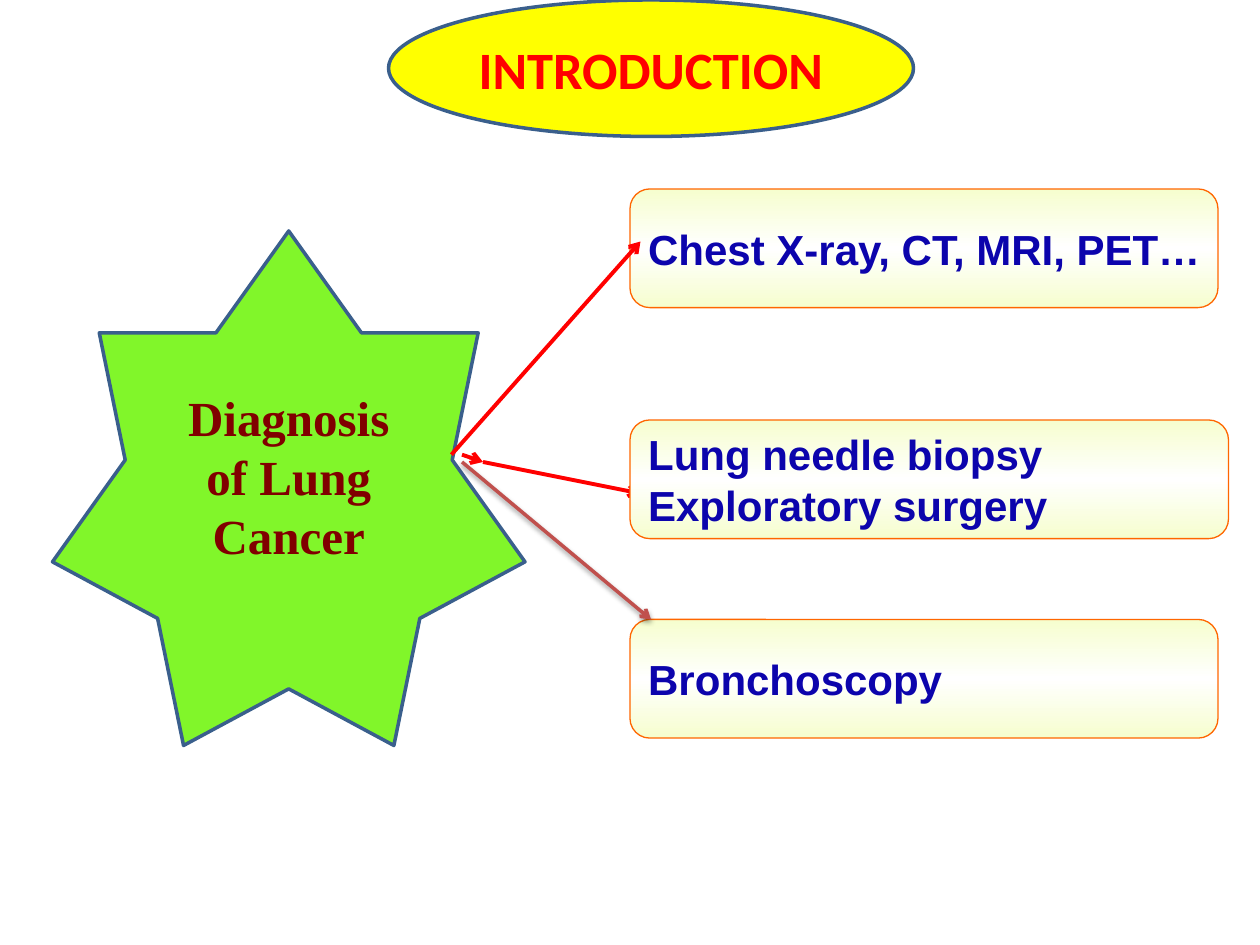
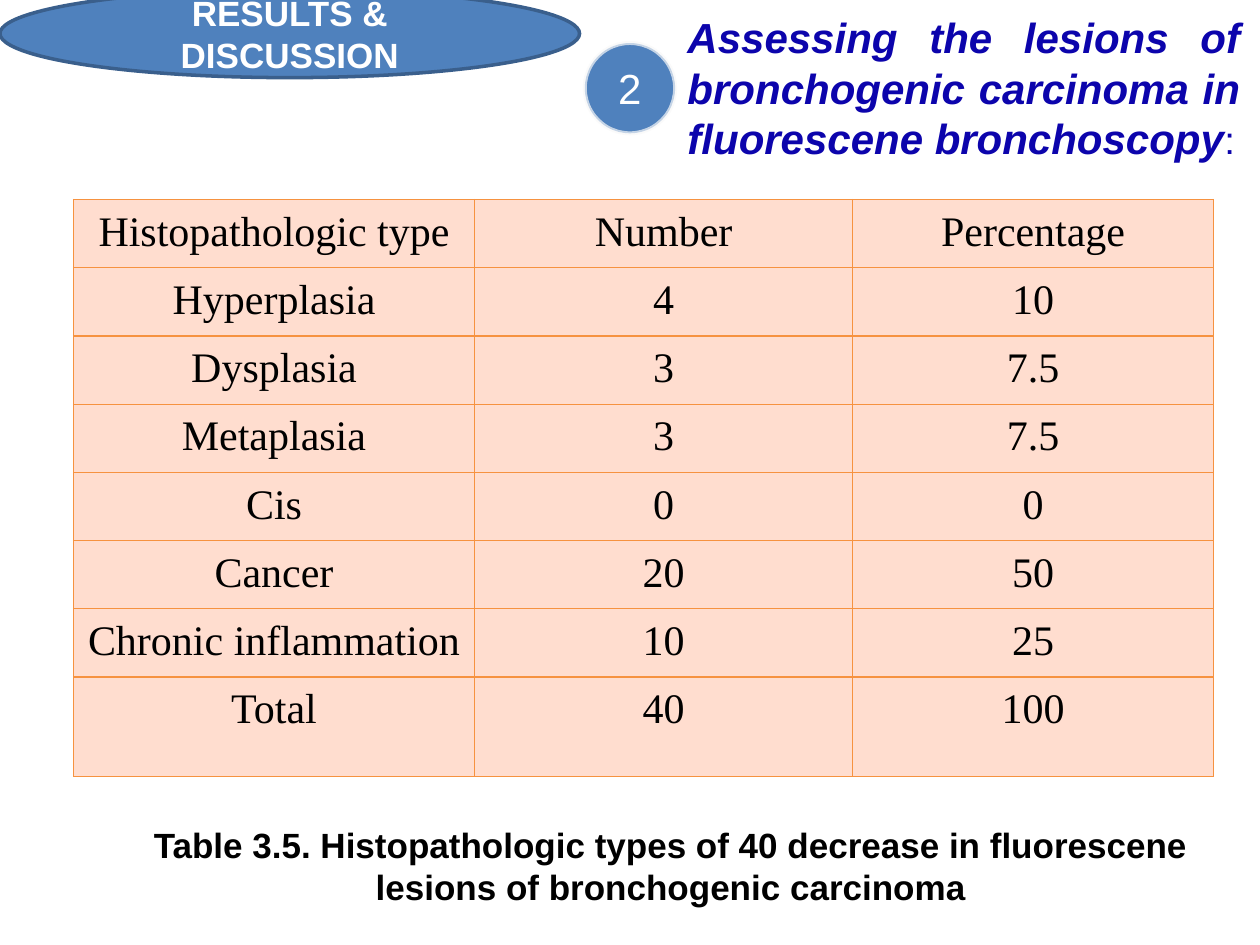
from copy import deepcopy

from lxml import etree
from pptx import Presentation
from pptx import util as u
from pptx.dml.color import RGBColor
from pptx.enum import shapes, text
from pptx.oxml import ns

COLORS = {
    "red": "FF0000", "yellow": "FFFF00", "green": "81F62A", "maroon": "800000",
    "navy": "0C04AC", "cream": "F6FECE", "white": "FFFFFF", "orange": "FF6600",
    "blue": "4F81BD", "outline": "3A5F8C", "brick": "C0504D", "peach": "FFDDCF",
    "rule": "F69240", "black": "000000", "ring": "F8F8F8",
}
# The slide is a grid of 120 columns by 90 rows
COLS, ROWS = 120, 90
SERIF = "Times New Roman"
CENTER, LEFT, JUSTIFY = text.PP_ALIGN.CENTER, text.PP_ALIGN.LEFT, text.PP_ALIGN.JUSTIFY
MIDDLE, TOP = text.MSO_ANCHOR.MIDDLE, text.MSO_ANCHOR.TOP
SHAPE = shapes.MSO_SHAPE

prs = Presentation()
prs.slide_width, prs.slide_height = u.Inches(10), u.Inches(7.5)


# Shared helpers
def rgb(name):
    return RGBColor.from_string(COLORS[name])


def grid_x(columns):
    return round(prs.slide_width * columns / COLS)


def grid_y(rows):
    return round(prs.slide_height * rows / ROWS)


def place(box):
    x, y, w, h = box
    return grid_x(x), grid_y(y), grid_x(w), grid_y(h)


def sub(parent, tag, **attrs):
    return etree.SubElement(parent, ns.qn(tag), attrs)


def clear_margins(tf):
    tf.margin_left = tf.margin_right = tf.margin_top = tf.margin_bottom = 0


def add_run(p, words, size, color, font="Arial", bold=True, italic=False):
    r = p.add_run()
    r.text = words
    r.font.size, r.font.name = u.Pt(size), font
    r.font.bold, r.font.italic = bold, italic
    r.font.color.rgb = rgb(color)


def write(tf, lines, size, color, align=CENTER, anchor=MIDDLE, **style):
    tf.word_wrap, tf.vertical_anchor = True, anchor
    for i, words in enumerate(lines):
        p = tf.add_paragraph() if i else tf.paragraphs[0]
        p.alignment = align
        add_run(p, words, size, color, **style)


def add_shape(s, kind, box, fill, line="outline", width=2):
    sp = s.shapes.add_shape(kind, *place(box))
    sp.shadow.inherit = False
    sp.fill.solid()
    sp.fill.fore_color.rgb = rgb(fill)
    sp.line.color.rgb, sp.line.width = rgb(line), u.Pt(width)
    return sp


def add_text_box(s, box):
    return s.shapes.add_textbox(*place(box)).text_frame


def title_oval(s, box, words, size, fill, color, font):
    """Oval with the slide title across its middle."""
    add_shape(s, SHAPE.OVAL, box, fill)
    x, y, w, h = box
    title = s.shapes.title
    title.left, title.top, title.width, title.height = place((x + w * 0.15, y, w * 0.7, h))
    tf = title.text_frame
    tf.auto_size = text.MSO_AUTO_SIZE.NONE
    clear_margins(tf)
    write(tf, [words], size, color, font=font)
    s.shapes._spTree.append(title._element)


# Slide 1 parts
def diagnosis_star(s, box):
    sp = add_shape(s, SHAPE.STAR_7_POINT, box, "green")
    write(sp.text_frame, ["Diagnosis of Lung Cancer"], 28, "maroon", font=SERIF)


def method_box(s, box, lines):
    sp = add_shape(s, SHAPE.ROUNDED_RECTANGLE, box, "white", "orange", 0.75)
    sp.fill.gradient()
    sp.fill.gradient_angle = 90
    first, last = sp.fill.gradient_stops
    for stop, position in ((first, 0), (last, 1)):
        stop.position, stop.color.rgb = position, rgb("cream")
    stops = sp._element.spPr.find(".//" + ns.qn("a:gsLst"))
    stops.insert(1, deepcopy(stops[0]))
    middle = sp.fill.gradient_stops[1]
    middle.position, middle.color.rgb = 0.5, rgb("white")
    sp.text_frame.margin_right = 0
    write(sp.text_frame, lines, 24, "navy", LEFT)


def arrow(s, start, end, color="red", width=2.25, shadow=False):
    (x1, y1), (x2, y2) = start, end
    line = s.shapes.add_connector(shapes.MSO_CONNECTOR.STRAIGHT,
                                  grid_x(x1), grid_y(y1), grid_x(x2), grid_y(y2))
    line.line.color.rgb, line.line.width = rgb(color), u.Pt(width)
    sub(line.line._get_or_add_ln(), "a:tailEnd", type="arrow")
    effects = sub(line._element.spPr, "a:effectLst")
    if shadow:
        outer = sub(effects, "a:outerShdw", blurRad=str(u.Pt(3.1)), dist=str(u.Pt(1.6)),
                    dir="5400000", rotWithShape="0")
        sub(sub(outer, "a:srgbClr", val=COLORS["black"]), "a:alpha", val="38000")


def introduction_slide(s):
    diagnosis_star(s, (5, 22, 45, 49))
    left, height = 60, 11.3
    method_box(s, (left, 18, 56, height), ["Chest X-ray, CT, MRI, PET…"])
    arrow(s, (43, 43.3), (61, 23))
    arrow(s, (44, 43.3), (46, 44))
    arrow(s, (46, 44), (61, 47))
    method_box(s, (left, 40, 57, height), ["Lung needle biopsy", "Exploratory surgery"])
    method_box(s, (left, 59, 56, height), ["Bronchoscopy"])
    arrow(s, (44, 44), (62, 59), "brick", 2, shadow=True)
    title_oval(s, (37, 0, 50, 13), "INTRODUCTION", 30, "yellow", "red", "Calibri")


# Slide 2 parts
def border_cell(cell):
    tc_pr = cell._tc.get_or_add_tcPr()
    for i, side in enumerate(("a:lnL", "a:lnR", "a:lnT", "a:lnB")):
        ln = etree.Element(ns.qn(side), w=str(u.Pt(0.75)))
        sub(sub(ln, "a:solidFill"), "a:srgbClr", val=COLORS["rule"])
        tc_pr.insert(i, ln)


def histology_table(s, box, rows, widths, heights):
    table = s.shapes.add_table(len(rows), len(widths), *place(box)).table
    table.first_row = table.horz_banding = False
    for column, width in zip(table.columns, widths):
        column.width = grid_x(width)
    for row, height, values in zip(table.rows, heights, rows):
        row.height = grid_y(height)
        for cell, value in zip(row.cells, values):
            cell.fill.solid()
            cell.fill.fore_color.rgb = rgb("peach")
            border_cell(cell)
            cell.margin_left = cell.margin_right = u.Inches(0.07)
            cell.margin_top = cell.margin_bottom = 0
            write(cell.text_frame, [value], 24, "black", anchor=TOP, font=SERIF, bold=False)
            cell.text_frame.paragraphs[0].line_spacing = 1.2


def number_badge(s, box, number):
    sp = add_shape(s, SHAPE.OVAL, box, "blue", "ring", 2.25)
    ring = sp.line._get_or_add_ln().find(".//" + ns.qn("a:srgbClr"))
    sub(ring, "a:alpha", val="70000")
    clear_margins(sp.text_frame)
    write(sp.text_frame, [number], 24, "white", bold=False)


def assessment_heading(s, box):
    tf = add_text_box(s, box)
    tf.margin_top, tf.margin_bottom = u.Inches(0.17), 0
    write(tf, ["Assessing the lesions of bronchogenic carcinoma in fluorescene bronchoscopy"],
          24, "navy", JUSTIFY, italic=True)
    add_run(tf.paragraphs[0], ":", 22, "navy", bold=False)


def results_slide(s):
    title_oval(s, (0, -1, 55.2, 8.4), "RESULTS & DISCUSSION", 20, "blue", "white", "Arial")
    rows = [
        ("Histopathologic type", "Number", "Percentage"),
        ("Hyperplasia", "4", "10"),
        ("Dysplasia", "3", "7.5"),
        ("Metaplasia", "3", "7.5"),
        ("Cis", "0", "0"),
        ("Cancer", "20", "50"),
        ("Chronic inflammation", "10", "25"),
        ("Total", "40", "100"),
    ]
    widths = (38.2, 36, 34.4)
    heights = [6.5] * (len(rows) - 1) + [9.5]
    histology_table(s, (7, 19, sum(widths), sum(heights)), rows, widths, heights)
    caption = add_text_box(s, (13.4, 77.8, 101, 9.2))
    write(caption, ["Table 3.5. Histopathologic types of 40 decrease in fluorescene "
                    "lesions of bronchogenic carcinoma"], 20, "black", anchor=TOP)
    number_badge(s, (55.7, 4.1, 8.6, 8.6), "2")
    assessment_heading(s, (64.3, -1, 55, 16.6))


def main():
    title_only = prs.slide_layouts[5]
    for build in (introduction_slide, results_slide):
        build(prs.slides.add_slide(title_only))
    prs.save("out.pptx")


if __name__ == "__main__":
    main()
